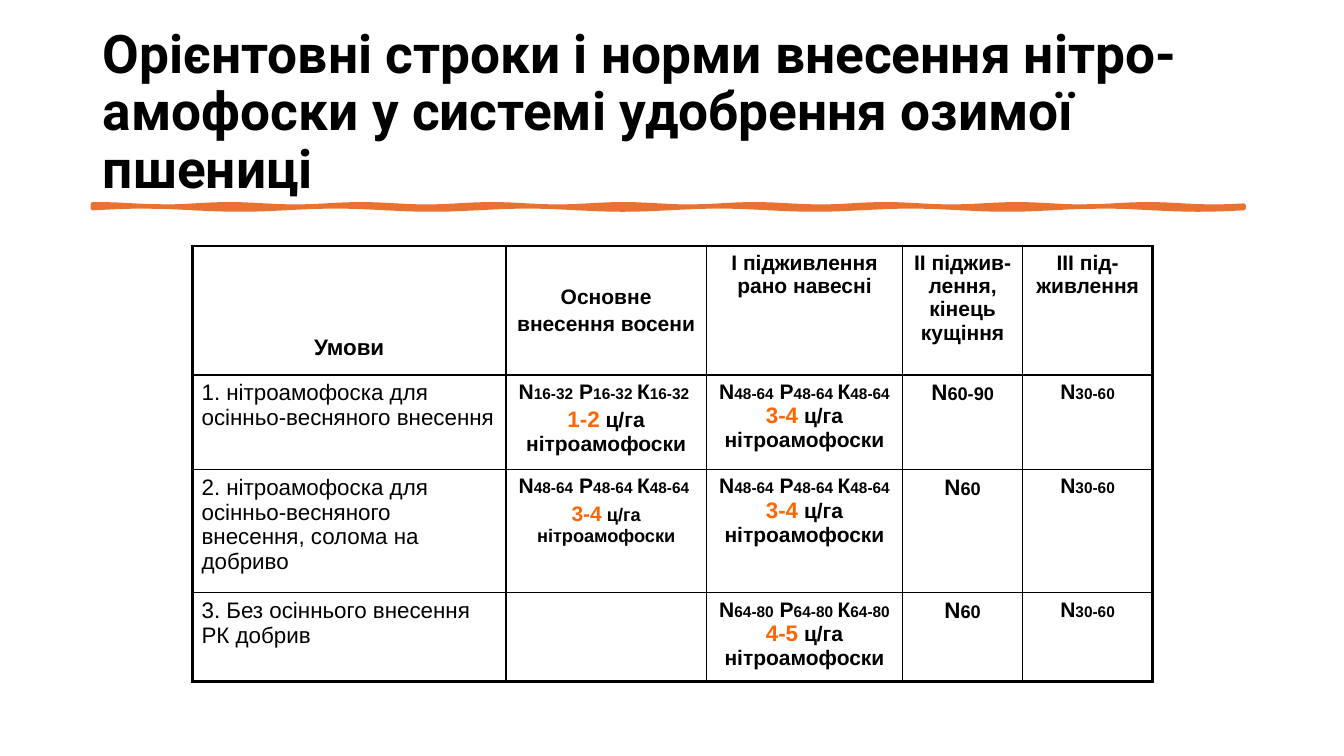
from math import sin
from lxml.etree import SubElement
from pptx import Presentation
from pptx.dml.color import RGBColor
from pptx.enum.text import MSO_ANCHOR, MSO_AUTO_SIZE, PP_ALIGN
from pptx.oxml.ns import qn
from pptx.util import Cm, Pt


def rgb(value):
    return RGBColor.from_string(value)


def add_run(p, text, size=15, color="000000", bold=True, font="Arial"):
    r = p.add_run()
    r.text = text
    r.font.size = Pt(size)
    r.font.bold = bold
    r.font.name = font
    r.font.color.rgb = rgb(color)


prs = Presentation()
prs.slide_width, prs.slide_height = Cm(33.87), Cm(19.05)
s = prs.slides.add_slide(prs.slide_layouts[5])

title = s.shapes.title
title.left, title.top, title.width, title.height = Cm(2.34), Cm(1.02), Cm(29.21), Cm(3.68)
tf = title.text_frame
tf.word_wrap = True
tf.auto_size = MSO_AUTO_SIZE.NONE
tf.vertical_anchor = MSO_ANCHOR.MIDDLE
p = tf.paragraphs[0]
p.alignment = PP_ALIGN.LEFT
p.line_spacing = 0.9
add_run(p, "Орієнтовні строки і норми внесення нітро-амофоски у системі удобрення озимої пшениці",
        size=38, font="Roboto")

xs = [2.34 + 0.29 * i for i in range(101)]
upper = [(Cm(x), Cm(5.18 + 0.03 * sin(1.9 * x))) for x in xs]
lower = [(Cm(x), Cm(5.24 + 0.04 * sin(1.3 * x))) for x in reversed(xs)]
fb = s.shapes.build_freeform(*upper[0])
fb.add_line_segments(upper[1:] + lower, close=True)
brush = fb.convert_to_shape()
brush.shadow.inherit = False
brush.fill.solid()
brush.fill.fore_color.rgb = rgb("E97132")
brush.line.color.rgb = rgb("E97132")
brush.line.width = Pt(3.25)

col_widths = [7.9, 5.05, 4.95, 3.02, 3.28]
row_heights = [3.25, 2.39, 3.1, 2.24]
headers = [["Умови"], ["Основне", "внесення восени"], ["І підживлення рано навесні"],
           ["ІІ піджив-лення, кінець кущіння"], ["ІІІ під-живлення"]]
conditions = [
    ("1. нітроамофоска для осінньо-весняного внесення",
     ("16-32", "1-2", 16, 15), ("48-64", "3-4", 16, 15), "60-90"),
    ("2. нітроамофоска для осінньо-весняного внесення, солома на добриво",
     ("48-64", "3-4", 15, 13), ("48-64", "3-4", 16, 15), "60"),
    ("3. Без осіннього внесення РК добрив",
     None, ("64-80", "4-5", 16, 15), "60"),
]

rows = [[[[(text, 15 if c else 16, "000000")] for text in lines]
         for c, lines in enumerate(headers)]]
for name, autumn, spring, second in conditions:
    doses = []
    for dose in (autumn, spring):
        if dose is None:
            doses.append([])
            continue
        norm, rate, rate_size, unit_size = dose
        formula = []
        for element, gap in (("N", ""), (" Р", " "), ("К", " ")):
            formula += [(element, 15, "000000"), (norm + gap, 11, "000000")]
        amount = [(rate, rate_size, "FF6600"), (" ц/га нітроамофоски", unit_size, "000000")]
        doses.append([formula, amount] if dose is autumn else [formula + amount])
    rows.append([[[(name, 16, "000000")]], *doses,
                 [[("N", 16, "000000"), (second, 13, "000000")]],
                 [[("N", 15, "000000"), ("30-60", 11, "000000")]]])

frame = s.shapes.add_table(len(rows), len(col_widths), Cm(4.85), Cm(6.2),
                           Cm(sum(col_widths)), Cm(sum(row_heights)))
table = frame.table
table.first_row = False
table.horz_banding = False
for col, width in zip(table.columns, col_widths):
    col.width = Cm(width)
for row, height in zip(table.rows, row_heights):
    row.height = Cm(height)

last_row, last_col = len(rows) - 1, len(col_widths) - 1
for i, row in enumerate(rows):
    for j, paragraphs in enumerate(row):
        cell = table.cell(i, j)
        cell.margin_left = cell.margin_right = Cm(0.23)
        cell.margin_top = cell.margin_bottom = Cm(0.13)
        tcPr = cell._tc.get_or_add_tcPr()
        edges = {"L": j == 0, "R": j == last_col, "T": i == 0, "B": i == last_row}
        for side, outer in edges.items():
            ln = SubElement(tcPr, qn(f"a:ln{side}"), w=str(Pt(2.25 if outer else 1)))
            fill = SubElement(ln, qn("a:solidFill"))
            SubElement(fill, qn("a:srgbClr"), val="000000")
        cell.fill.background()
        tf = cell.text_frame
        for k, runs in enumerate(paragraphs):
            p = tf.add_paragraph() if k else tf.paragraphs[0]
            p.alignment = PP_ALIGN.LEFT if i and j == 0 else PP_ALIGN.CENTER
            if k:
                p.space_before = Pt(3)
            for text, size, color in runs:
                add_run(p, text, size=size, color=color, bold=i == 0 or j > 0)

table.cell(0, 0).vertical_anchor = MSO_ANCHOR.BOTTOM
table.cell(0, 0).margin_bottom = Cm(0.38)
table.cell(0, 1).vertical_anchor = MSO_ANCHOR.MIDDLE

prs.save("out.pptx")
